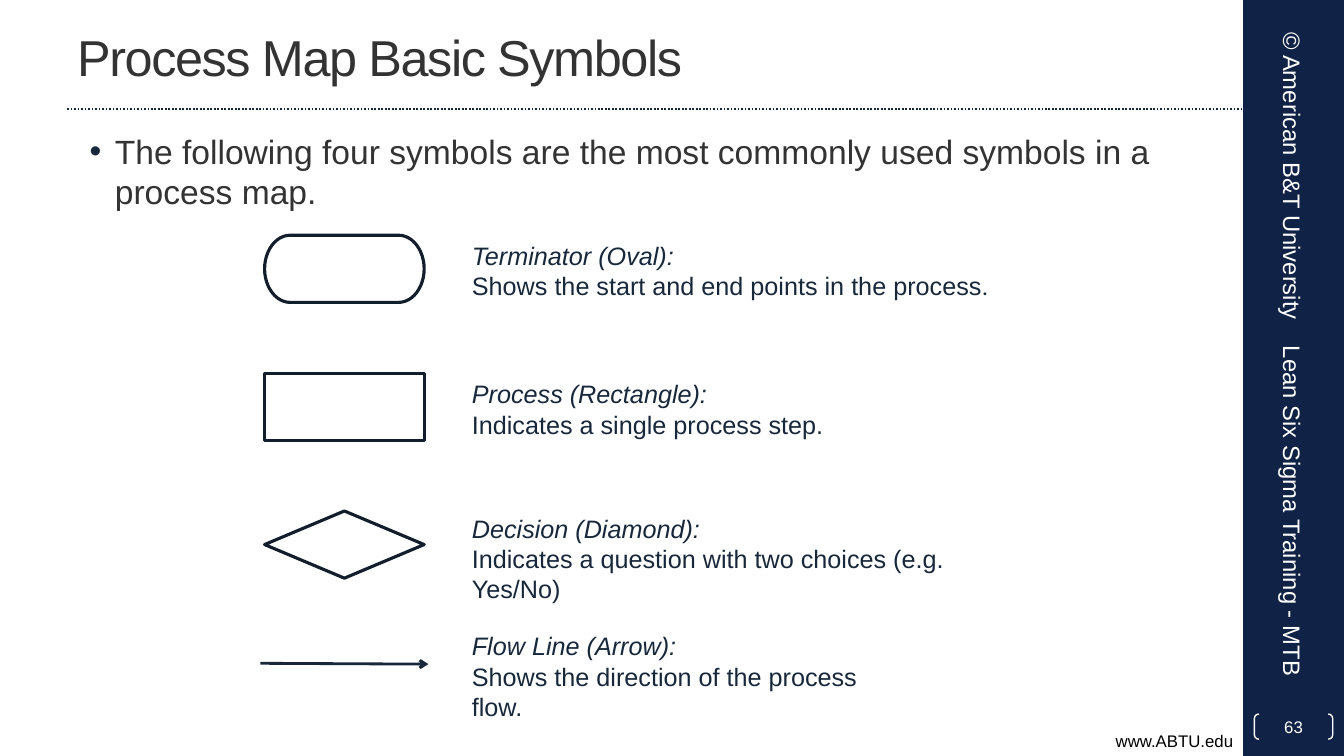
from lxml import etree
from pptx import Presentation
from pptx import util as u
from pptx.dml.color import RGBColor
from pptx.enum import dml, shapes, text
from pptx.oxml.ns import qn

COLORS = {"navy": "102245", "ink": "18283B", "outline": "121E2C", "rule": "17273B",
          "gray": "333333", "black": "000000", "white": "FFFFFF"}
SHAPE = shapes.MSO_SHAPE
ALIGN = text.PP_ALIGN
MIDDLE = text.MSO_ANCHOR.MIDDLE


class Slide:
    """Holds the style and the current slide; all lengths are in points."""

    font = "Arial"

    def __init__(self, prs):
        self.s = prs.slides.add_slide(prs.slide_layouts[6])

    def color(self, name):
        return RGBColor.from_string(COLORS[name])

    def fill_text(self, sp, paragraphs, color, align=ALIGN.LEFT,
                  anchor=text.MSO_ANCHOR.TOP, **fmt):
        """Each paragraph is a list of (text, overrides) runs."""
        tf = sp.text_frame
        tf.word_wrap = True
        tf.vertical_anchor = anchor
        for i, runs in enumerate(paragraphs):
            p = tf.paragraphs[0] if i == 0 else tf.add_paragraph()
            p.alignment = align
            for words, extra in runs:
                r = p.add_run()
                r.text = words
                r.font.color.rgb = self.color(color)
                for key, value in {"name": self.font, **fmt, **extra}.items():
                    setattr(r.font, key, value)
        return tf

    def box(self, x, y, w, h, paragraphs, color, rotation=0, **fmt):
        sp = self.s.shapes.add_textbox(u.Pt(x), u.Pt(y), u.Pt(w), u.Pt(h))
        sp.rotation = rotation
        return self.fill_text(sp, paragraphs, color, **fmt)

    def shape(self, kind, x, y, w, h, fill=None, line=None, width=1):
        sp = self.s.shapes.add_shape(kind, u.Pt(x), u.Pt(y), u.Pt(w), u.Pt(h))
        sp.shadow.inherit = False
        if fill:
            sp.fill.solid()
            sp.fill.fore_color.rgb = self.color(fill)
        else:
            sp.fill.background()
        if line:
            sp.line.color.rgb = self.color(line)
            sp.line.width = u.Pt(width)
        else:
            sp.line.fill.background()
        return sp

    def line(self, x1, y1, x2, y2, color, width, dash=None, arrow=False):
        c = self.s.shapes.add_connector(shapes.MSO_CONNECTOR.STRAIGHT,
                                        u.Pt(x1), u.Pt(y1), u.Pt(x2), u.Pt(y2))
        c.line.color.rgb = self.color(color)
        c.line.width = u.Pt(width)
        if dash:
            c.line.dash_style = dash
        spPr = c._element.spPr
        if arrow:
            etree.SubElement(spPr.find(qn("a:ln")), qn("a:tailEnd"), type="arrow")
        etree.SubElement(spPr, qn("a:effectLst"))

    def bullet(self, p, color, margin, indent):
        pPr = p._p.get_or_add_pPr()
        pPr.set("marL", str(u.Pt(margin)))
        pPr.set("indent", str(u.Pt(indent)))
        clr = etree.SubElement(pPr, qn("a:buClr"))
        etree.SubElement(clr, qn("a:srgbClr"), val=COLORS[color])
        etree.SubElement(pPr, qn("a:buFont"), typeface="Arial")
        etree.SubElement(pPr, qn("a:buChar"), char="•")


def main():
    prs = Presentation()
    prs.slide_width, prs.slide_height = u.Pt(960), u.Pt(540)
    slide = Slide(prs)

    # Sidebar, rule and footer
    slide.shape(SHAPE.RECTANGLE, 888, 0, 72, 540, fill="navy")
    slide.line(48, 78, 888, 78, "rule", 1.25, dash=dml.MSO_LINE.ROUND_DOT)
    slide.box(0, 518.4, 888, 21.6, [[("www.ABTU.edu", {})]], "black",
              align=ALIGN.RIGHT, size=u.Pt(12))

    # Title
    tf = slide.box(48, 2, 800, 76, [[("Process Map Basic Symbols", {})]], "gray",
                   anchor=MIDDLE, size=u.Pt(36))
    tf.paragraphs[0].runs[0]._r.get_or_add_rPr().set("spc", "-100")

    # Introduction
    intro = "The following four symbols are the most commonly used symbols in a process map."
    tf = slide.box(48, 90, 800, 432, [[(intro, {})]], "gray", size=u.Pt(24))
    slide.bullet(tf.paragraphs[0], "ink", 27, -18)

    # Page number
    number = slide.shape(SHAPE.DOUBLE_BRACKET, 896, 510, 56, 18, line="white")
    number.adjustments[0] = 0.18
    tf = slide.fill_text(number, [[("63", {})]], "white", align=ALIGN.CENTER,
                         anchor=MIDDLE, size=u.Pt(12))
    for side in ("left", "top", "right", "bottom"):
        setattr(tf, f"margin_{side}", 0)

    # Sidebar labels
    for x, y, w, label, align in (
            (809.3, 106.6, 228, "© American B&T University", ALIGN.CENTER),
            (791.3, 352.8, 264, "Lean Six Sigma Training - MTB", ALIGN.LEFT)):
        slide.box(x, y, w, 38.2, [[(label, {})]], "white", rotation=90,
                  align=align, anchor=MIDDLE, size=u.Pt(17))

    # Symbols
    kinds = (SHAPE.FLOWCHART_TERMINATOR, SHAPE.FLOWCHART_PROCESS, SHAPE.FLOWCHART_DECISION)
    for i, kind in enumerate(kinds):
        slide.shape(kind, 189, 168 + 98.5 * i, 114, 48, line="outline", width=2.25)
    slide.line(186, 473.8, 306, 474.4, "ink", 2, arrow=True)

    # Descriptions
    for y, w, h, name, meaning in (
            (168, 387, 51, "Terminator (Oval):",
             [("Shows the start and end points in the process", {}), (".", {"name": "Roboto"})]),
            (267, 330, 51, "Process (Rectangle):",
             [("Indicates a single process step.", {})]),
            (363, 393, 73, "Decision (Diamond):",
             [("Indicates a question with two choices (e.g. Yes/No)", {})]),
            (447, 330, 73, "Flow Line (Arrow):",
             [("Shows the direction of the process flow.", {})])):
        slide.box(330, y, w, h, [[(name, {"italic": True})], meaning], "ink", size=u.Pt(18))

    prs.save("out.pptx")


if __name__ == "__main__":
    main()
